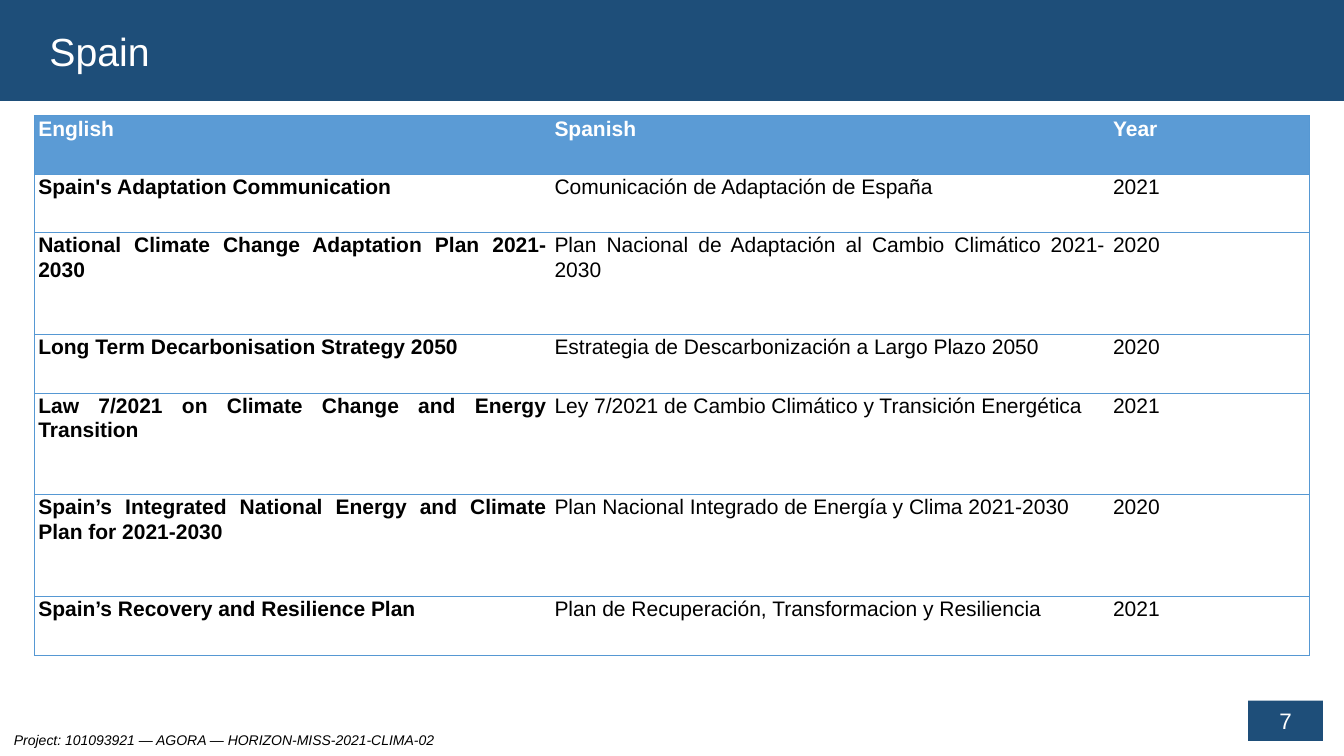
"""Build the slide listing Spain's climate adaptation policies."""
import lxml.etree
import pptx
import pptx.dml.color
import pptx.enum.shapes
import pptx.enum.text
import pptx.oxml.ns
import pptx.util

Inches = pptx.util.Inches
Pt = pptx.util.Pt
Align = pptx.enum.text.PP_ALIGN
NAVY = pptx.dml.color.RGBColor(0x1E, 0x4E, 0x79)
HEADER_BLUE = pptx.dml.color.RGBColor(0x5B, 0x9B, 0xD5)
BORDER_BLUE = pptx.dml.color.RGBColor(0x56, 0x98, 0xD3)
WHITE = pptx.dml.color.RGBColor(0xFF, 0xFF, 0xFF)
BLACK = pptx.dml.color.RGBColor(0, 0, 0)
NO_STYLE = "{2D5ABB26-0587-4C30-8999-92F81FD0307C}"


def add_text(frame, text, size, color, alignment, bold=False, italic=False):
    """Write one formatted run into the first paragraph and return the paragraph."""
    paragraph = frame.paragraphs[0]
    paragraph.alignment = alignment
    run = paragraph.add_run()
    run.text = text
    run.font.name = "Arial"
    run.font.size = Pt(size)
    run.font.color.rgb = color
    run.font.bold = bold
    run.font.italic = italic
    return paragraph


def add_border(cell, side):
    """Draw a thin blue line along one side of a table cell."""
    properties = cell._tc.get_or_add_tcPr()
    line = lxml.etree.SubElement(properties, pptx.oxml.ns.qn(f"a:ln{side}"), w=str(Pt(0.75)))
    fill = lxml.etree.SubElement(line, pptx.oxml.ns.qn("a:solidFill"))
    lxml.etree.SubElement(fill, pptx.oxml.ns.qn("a:srgbClr"), val=str(BORDER_BLUE))


presentation = pptx.Presentation()
presentation.slide_width = Inches(13.33)
presentation.slide_height = Inches(7.5)
slide = presentation.slides.add_slide(presentation.slide_layouts[5])

title = slide.shapes.title
title.left, title.top = 0, 0
title.width, title.height = presentation.slide_width, Inches(1)
title.fill.solid()
title.fill.fore_color.rgb = NAVY
title.text_frame.margin_left = Inches(0.49)
title.text_frame.vertical_anchor = pptx.enum.text.MSO_ANCHOR.MIDDLE
add_text(title.text_frame, "Spain", 28, WHITE, Align.LEFT)

page_box = slide.shapes.add_shape(
    pptx.enum.shapes.MSO_SHAPE.RECTANGLE,
    Inches(12.38), Inches(6.95), Inches(0.74), Inches(0.4))
page_box.shadow.inherit = False
page_box.fill.solid()
page_box.fill.fore_color.rgb = NAVY
page_box.line.fill.background()
page_box.text_frame.vertical_anchor = pptx.enum.text.MSO_ANCHOR.MIDDLE
add_text(page_box.text_frame, "7", 16, WHITE, Align.CENTER)

footer = slide.shapes.add_textbox(Inches(0.04), Inches(7.21), Inches(6.67), Inches(0.27))
footer.text_frame.word_wrap = True
add_text(footer.text_frame, "Project: 101093921 — AGORA — HORIZON-MISS-2021-CLIMA-02",
         10, BLACK, Align.LEFT, italic=True)

SHORT, TALL = 0.58, 1.01
column_widths = [5.12, 5.54, 1.99]
policies = [
    (SHORT, "English", "Spanish", "Year"),
    (SHORT, "Spain's Adaptation Communication", "Comunicación de Adaptación de España", "2021"),
    (TALL, "National Climate Change Adaptation Plan 2021-2030",
     "Plan Nacional de Adaptación al Cambio Climático 2021-2030", "2020"),
    (SHORT, "Long Term Decarbonisation Strategy 2050",
     "Estrategia de Descarbonización a Largo Plazo 2050", "2020"),
    (TALL, "Law 7/2021 on Climate Change and Energy Transition",
     "Ley 7/2021 de Cambio Climático y Transición Energética", "2021"),
    (TALL, "Spain’s Integrated National Energy and Climate Plan for 2021-2030",
     "Plan Nacional Integrado de Energía y Clima 2021-2030", "2020"),
    (SHORT, "Spain’s Recovery and Resilience Plan",
     "Plan de Recuperación, Transformacion y Resiliencia", "2021"),
]
table_frame = slide.shapes.add_table(
    len(policies), len(column_widths), Inches(0.34), Inches(1.15),
    Inches(sum(column_widths)), Inches(sum(policy[0] for policy in policies)))
table = table_frame.table
table.horz_banding = False
table._tbl.tblPr.find(pptx.oxml.ns.qn("a:tableStyleId")).text = NO_STYLE
for column, width in zip(table.columns, column_widths):
    column.width = Inches(width)

for row_index, (height, *texts) in enumerate(policies):
    table.rows[row_index].height = Inches(height)
    is_header = row_index == 0
    for column_index, text in enumerate(texts):
        cell = table.cell(row_index, column_index)
        cell.margin_left = cell.margin_right = Inches(0.04)
        cell.margin_top = cell.margin_bottom = 0
        if column_index == 0:
            add_border(cell, "L")
        if column_index == len(column_widths) - 1:
            add_border(cell, "R")
        add_border(cell, "T")
        add_border(cell, "B")
        if is_header:
            cell.fill.solid()
            cell.fill.fore_color.rgb = HEADER_BLUE
        else:
            cell.fill.background()
        paragraph = add_text(cell.text_frame, text, 15, WHITE if is_header else BLACK,
                             Align.JUSTIFY, bold=is_header or column_index == 0)
        paragraph.line_spacing = 1.05
        paragraph.space_after = Pt(8)

presentation.save("out.pptx")
